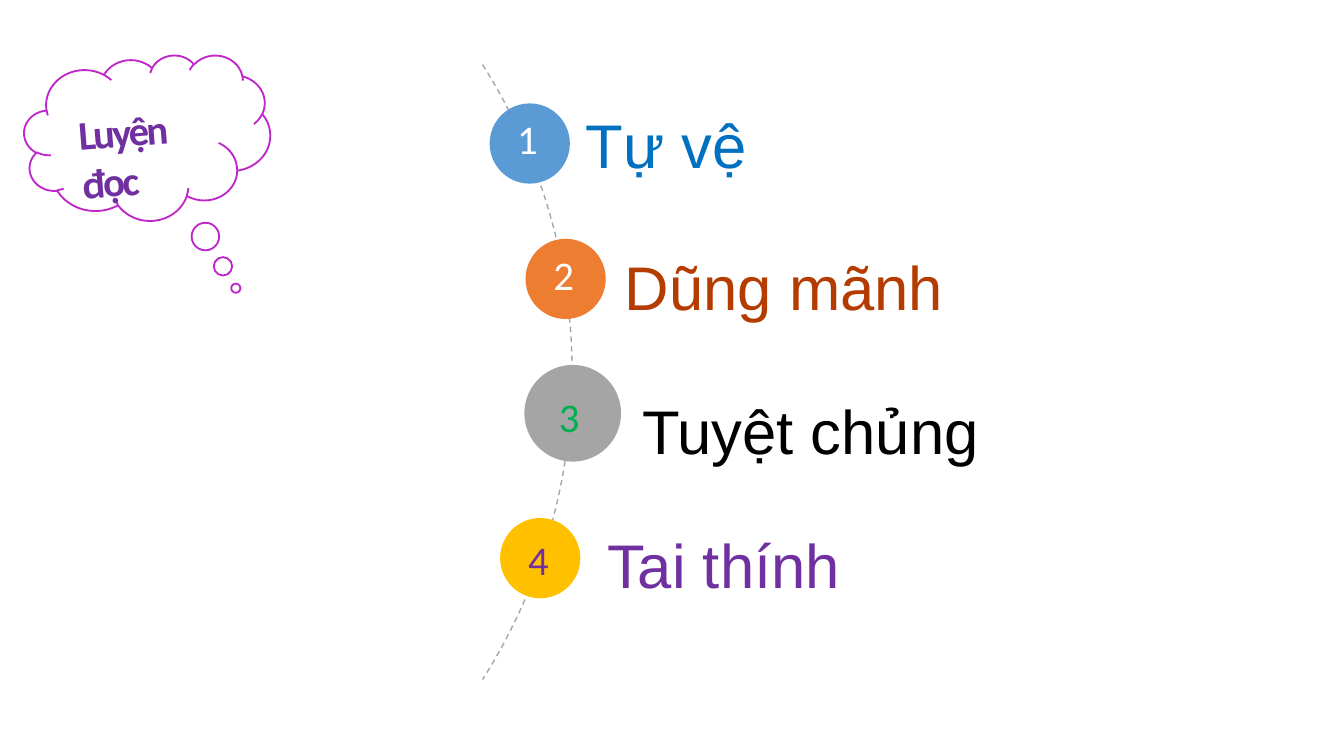
from math import asin, cos, sin

from lxml import etree
from pptx import Presentation
from pptx.dml.color import RGBColor
from pptx.enum.dml import MSO_LINE_DASH_STYLE as DASH
from pptx.enum.shapes import MSO_SHAPE as SHAPE
from pptx.enum.text import MSO_ANCHOR as ANCHOR, MSO_AUTO_SIZE as AUTO, PP_ALIGN as ALIGN
from pptx.util import Pt

# number circle box, circle fill, number position, number colour,
# label box (left, top, width), label colour, label
WORDS = [
    ((262.3, 55.4, 43), "5B9BD5", (270, 57.6), "FFFFFF", (306.7, 33.8, 254.9), "0070C0", "Tự vệ"),
    ((281.5, 127.9, 43), "ED7D31", (289.4, 130.3), "FFFFFF", (327.6, 110.2, 222.5), "B43C00", "Dũng mãnh"),
    ((280.9, 195.5, 51.8), "A5A5A5", (292.3, 206.6), "00B050", (337, 187.2, 266.4), "000000", "Tuyệt chủng"),
    ((267.9, 277.5, 43), "FFC000", (275.8, 283), "7030A0", (318.2, 259.2, 262.8), "7030A0", "Tai thính"),
]


def color(value):
    return RGBColor.from_string(value)


def paint(sp, fill=None, line=None, width=1):
    """Set fill and outline; None means no paint."""
    sp.shadow.inherit = False
    if fill:
        sp.fill.solid()
        sp.fill.fore_color.rgb = color(fill)
    else:
        sp.fill.background()
    if line:
        sp.line.color.rgb = color(line)
        sp.line.width = Pt(width)
    else:
        sp.line.fill.background()


def write(sp, text, size, font, rgb, wrap=True, spacing=None, tracking=None, bold=False):
    tf = sp.text_frame
    tf.word_wrap = wrap
    tf.auto_size = AUTO.SHAPE_TO_FIT_TEXT
    tf.vertical_anchor = ANCHOR.TOP
    p = tf.paragraphs[0]
    r = p.add_run()
    r.text = text
    p.alignment = ALIGN.LEFT
    if spacing:
        p.line_spacing = spacing
    p.font.size, p.font.name, p.font.bold = Pt(size), font, bold
    p.font.color.rgb = color(rgb)
    if tracking:
        r.font._element.set("spc", str(round(tracking * 100)))


def add_arc(s, left, top, width, height, steps=60):
    """Dashed circular arc bulging right to fill the box."""
    half = height / 2
    radius = (half ** 2 + width ** 2) / (2 * width)
    cx, cy, sweep = left + width - radius, top + half, asin(half / radius)
    angles = [sweep * (2 * i / steps - 1) for i in range(steps + 1)]
    points = [(Pt(cx + radius * cos(a)), Pt(cy + radius * sin(a))) for a in angles]
    builder = s.shapes.build_freeform(*points[0])
    builder.add_line_segments(points[1:], close=False)
    sp = builder.convert_to_shape()
    paint(sp, line="A6A6A6", width=0)
    sp.line.dash_style = DASH.DASH


def add_word(s, circle, fill, number_at, number_rgb, label_box, label_rgb, number, label):
    left, top, size = circle
    sp = s.shapes.add_shape(SHAPE.OVAL, Pt(left), Pt(top), Pt(size), Pt(size))
    paint(sp, fill)
    left, top = number_at
    sp = s.shapes.add_textbox(Pt(left), Pt(top), Pt(27.4), Pt(33.8))
    write(sp, number, 21.8, "Calibri", number_rgb, wrap=False, tracking=0.02)
    left, top, width = label_box
    sp = s.shapes.add_textbox(Pt(left), Pt(top), Pt(width), Pt(59.8))
    write(sp, label, 33, "Arial", label_rgb, spacing=1.5)


def add_heading(s, left, top, width, height):
    """Thought cloud with the tilted slide title in front of it."""
    sp = s.shapes.add_shape(SHAPE.CLOUD_CALLOUT, Pt(left), Pt(top), Pt(width), Pt(height))
    sp.adjustments[0], sp.adjustments[1] = 0.36, 0.91
    paint(sp, "FFFFFF", "BF27CB")
    title = s.shapes.title
    title.left, title.top = Pt(left + 21.6), Pt(top + 23)
    title.width, title.height = Pt(89.3), Pt(33.1)
    title.rotation = 355.4
    write(title, "Luyện đọc", 21.8, "Calibri", "7030A0", tracking=-1.4, bold=True)
    sp._element.addnext(title._element)


def main():
    prs = Presentation()
    prs.slide_width, prs.slide_height = Pt(720), Pt(405)
    s = prs.slides.add_slide(prs.slide_layouts[5])
    add_arc(s, 258.5, 34.6, 48, 329.5)
    for i, (*parts, label) in enumerate(WORDS, 1):
        add_word(s, *parts, str(i), label)
    add_heading(s, 13, 29.5, 131.8, 88.6)
    prs.save("out.pptx")


if __name__ == "__main__":
    main()
